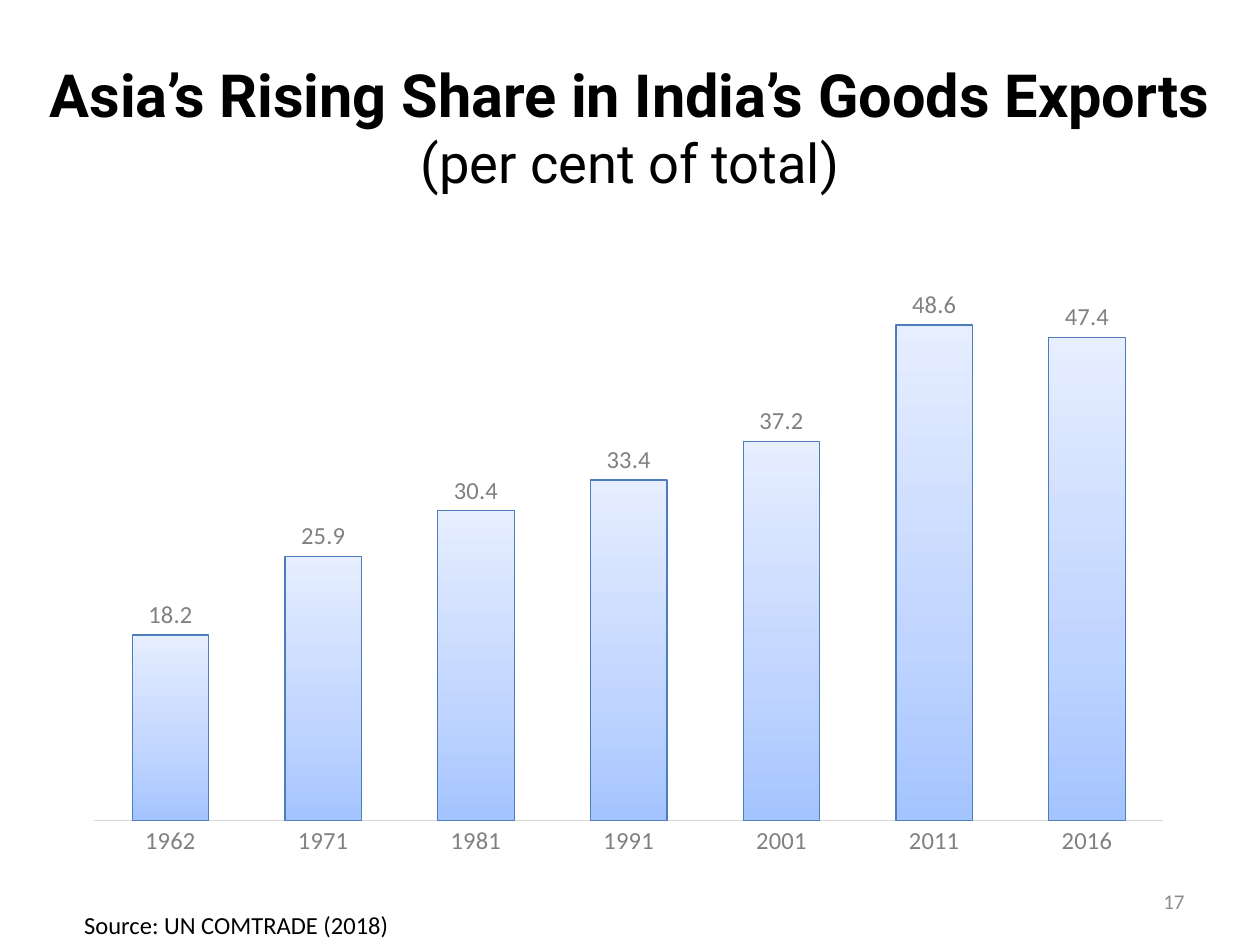
from copy import deepcopy

from pptx import Presentation
from pptx.chart.data import CategoryChartData
from pptx.dml.color import RGBColor
from pptx.enum.chart import XL_CHART_TYPE, XL_LABEL_POSITION, XL_TICK_MARK
from pptx.enum.text import MSO_ANCHOR, PP_ALIGN
from pptx.util import Inches, Pt

COLUMNS = XL_CHART_TYPE.COLUMN_CLUSTERED
OUTSIDE_END = XL_LABEL_POSITION.OUTSIDE_END
NO_TICK = XL_TICK_MARK.NONE
TOP, MIDDLE = MSO_ANCHOR.TOP, MSO_ANCHOR.MIDDLE
LEFT, CENTER, RIGHT = PP_ALIGN.LEFT, PP_ALIGN.CENTER, PP_ALIGN.RIGHT

BODY_FONT, TITLE_FONT = "Calibri", "Roboto"
BLACK, GREY, PALE_GREY = "000000", "808080", "D9D9D9"
BAR_LINE = "4D7EB9"
BAR_GRADIENT = [(0, "A4C4FF"), (0.35, "BFD4FF"), (1, "E6EEFF")]
ASIA_SHARE = {"1962": 18.2, "1971": 25.9, "1981": 30.4, "1991": 33.4,
              "2001": 37.2, "2011": 48.6, "2016": 47.4}


def rgb(color):
    return RGBColor.from_string(color)


def box(left, top, width, height):
    return [Inches(v) for v in (left, top, width, height)]


def style_font(font, size, color, name=BODY_FONT, bold=False):
    font.size, font.name, font.bold = Pt(size), name, bold
    font.color.rgb = rgb(color)


def style_line(line, color):
    line.color.rgb = rgb(color)
    line.width = Pt(0.75)


def add_run(p, text, *style):
    r = p.add_run()
    r.text = text
    style_font(r.font, *style)


def add_title(s):
    title = s.shapes.title
    title.left, title.top, title.width, title.height = box(0.12, 0.29, 9.76, 1.42)
    tf = title.text_frame
    tf.word_wrap, tf.vertical_anchor = True, MIDDLE
    p = tf.paragraphs[0]
    p.alignment = CENTER
    add_run(p, "Asia’s Rising Share in India’s Goods Exports", 34, BLACK, TITLE_FONT, True)
    p.add_line_break()
    add_run(p, "(per cent of total)", 31, BLACK, TITLE_FONT)


def add_text(s, place, text, size, color, align=LEFT, anchor=TOP):
    tf = s.shapes.add_textbox(*box(*place)).text_frame
    tf.word_wrap, tf.vertical_anchor = True, anchor
    p = tf.paragraphs[0]
    p.alignment = align
    add_run(p, text, size, color)


def fill_gradient(fill, stops):
    """Fill from bottom to top through any number of stops."""
    fill.gradient()
    fill.gradient_angle = 90
    stop_list = fill._fill._gradFill.gsLst
    for _ in stops[2:]:
        stop_list.append(deepcopy(stop_list[0]))
    for stop, (position, color) in zip(fill.gradient_stops, stops):
        stop.position = position
        stop.color.rgb = rgb(color)


def add_share_chart(s):
    data = CategoryChartData(number_format="0.0")
    data.categories = list(ASIA_SHARE)
    data.add_series("Series 1", list(ASIA_SHARE.values()))
    chart = s.shapes.add_chart(COLUMNS, *box(0.57, 1.55, 8.84, 5.35), data).chart
    chart.has_legend = chart.has_title = False
    style_font(chart.font, 14, BLACK)

    years, shares = chart.category_axis, chart.value_axis
    years.major_tick_mark = years.minor_tick_mark = NO_TICK
    style_font(years.tick_labels.font, 14, GREY)
    style_line(years.format.line, PALE_GREY)
    shares.minimum_scale, shares.maximum_scale = 0, 60
    shares.has_major_gridlines = shares.visible = False

    plot = chart.plots[0]
    plot.gap_width, plot.overlap, plot.vary_by_categories = 100, -24, False
    bars = plot.series[0]
    fill_gradient(bars.format.fill, BAR_GRADIENT)
    style_line(bars.format.line, BAR_LINE)
    labels = bars.data_labels
    labels.show_value, labels.position = True, OUTSIDE_END
    labels.number_format, labels.number_format_is_linked = "0.0", False
    style_font(labels.font, 14, GREY)


def main():
    prs = Presentation()
    prs.slide_width, prs.slide_height = Inches(10), Inches(7.5)
    s = prs.slides.add_slide(prs.slide_layouts[5])
    add_title(s)
    add_text(s, (0.57, 7.17, 3.83, 0.34), "Source: UN COMTRADE (2018)", 14, BLACK)
    add_text(s, (7.17, 6.95, 2.33, 0.4), "17", 12, "8C8C8C", RIGHT, MIDDLE)
    add_share_chart(s)
    prs.save("out.pptx")


if __name__ == "__main__":
    main()
